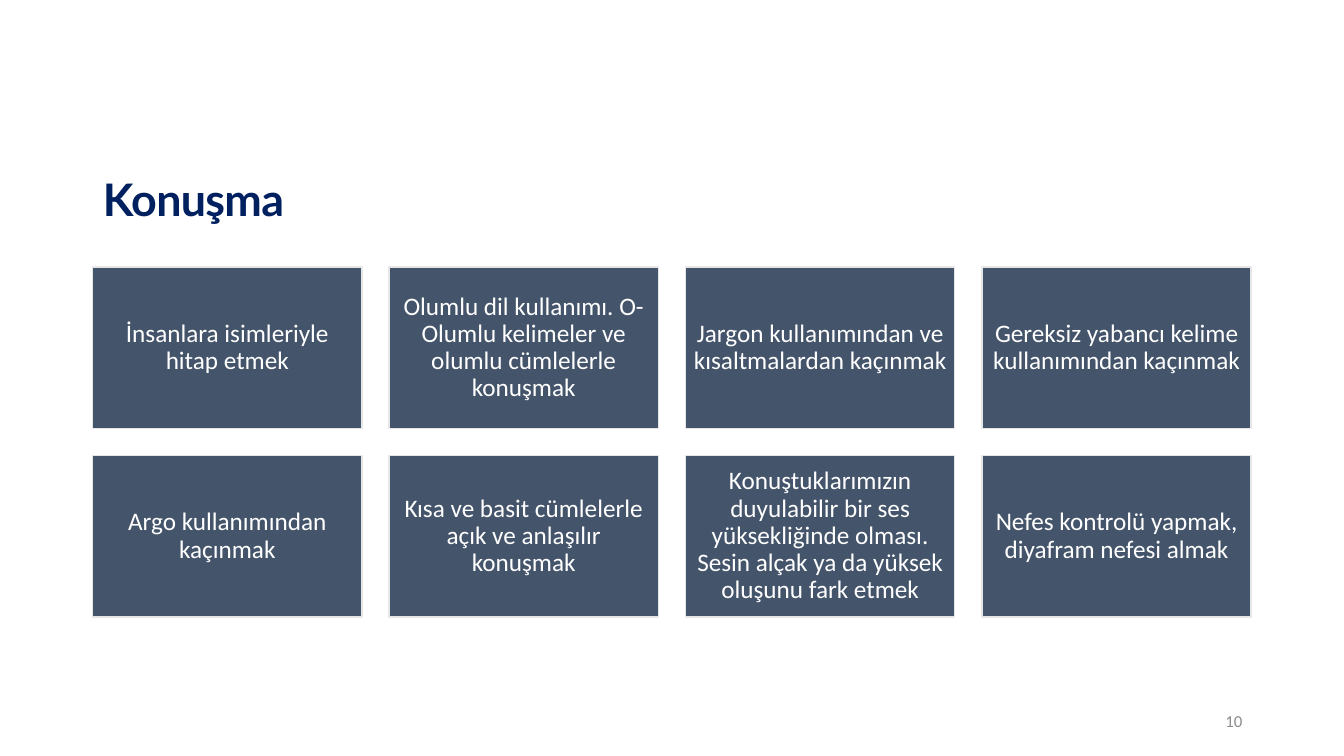
from pptx import Presentation
from pptx import util as u
from pptx.dml.color import RGBColor
from pptx.enum import shapes, text


def rgb(value):
    return RGBColor.from_string(value)


class SlideBuilder:
    NAVY, SLATE, PALE, WHITE, GREY = "002060", "44546A", "E7E6E6", "FFFFFF", "8C8C8C"
    HEADING, BODY = "Lato", "Calibri"

    def __init__(self, prs):
        self.slide = prs.slides.add_slide(prs.slide_layouts[5])

    def box(self, *lengths):
        return [u.Inches(n) for n in lengths]

    def label(self, sp, words, size, font, color, align, bold=False):
        tf = sp.text_frame
        tf.text = words
        tf.word_wrap = True
        tf.vertical_anchor = text.MSO_ANCHOR.MIDDLE
        p = tf.paragraphs[0]
        p.alignment = align
        r = p.runs[0]
        r.font.size = u.Pt(size)
        r.font.name = font
        r.font.bold = bold
        r.font.color.rgb = rgb(color)
        return p

    def title(self, words, *place):
        sp = self.slide.shapes.title
        sp.left, sp.top, sp.width, sp.height = self.box(*place)
        p = self.label(sp, words, 32, self.HEADING, self.NAVY, text.PP_ALIGN.LEFT, True)
        p.line_spacing = 0.9
        p.runs[0].font._element.set("spc", "-50")

    def card(self, words, *place):
        sp = self.slide.shapes.add_shape(shapes.MSO_SHAPE.RECTANGLE, *self.box(*place))
        sp.shadow.inherit = False
        sp.fill.solid()
        sp.fill.fore_color.rgb = rgb(self.SLATE)
        sp.line.color.rgb = rgb(self.PALE)
        sp.line.width = u.Pt(1)
        tf = sp.text_frame
        tf.margin_left = tf.margin_right = tf.margin_top = tf.margin_bottom = u.Inches(0.07)
        p = self.label(sp, words, 18, self.BODY, self.WHITE, text.PP_ALIGN.CENTER)
        p.line_spacing = 0.9

    def page_number(self, number, *place):
        sp = self.slide.shapes.add_textbox(*self.box(*place))
        self.label(sp, number, 12, self.BODY, self.GREY, text.PP_ALIGN.RIGHT)


CARDS = [
    "İnsanlara isimleriyle hitap etmek",
    "Olumlu dil kullanımı. O-Olumlu kelimeler ve olumlu cümlelerle konuşmak",
    "Jargon kullanımından ve kısaltmalardan kaçınmak",
    "Gereksiz yabancı kelime kullanımından kaçınmak",
    "Argo kullanımından kaçınmak",
    "Kısa ve basit cümlelerle açık ve anlaşılır konuşmak",
    "Konuştuklarımızın duyulabilir bir ses yüksekliğinde olması. "
    "Sesin alçak ya da yüksek oluşunu fark etmek",
    "Nefes kontrolü yapmak, diyafram nefesi almak",
]
COLUMNS = 4
LEFT, TOP = 0.92, 2.65
CARD_W, CARD_H, GAP = 2.67, 1.6, 0.27


def main():
    prs = Presentation()
    prs.slide_width, prs.slide_height = u.Inches(13.33), u.Inches(7.5)
    s = SlideBuilder(prs)
    s.title("Konuşma", LEFT, 1.28, 11.5, 1.45)
    for i, words in enumerate(CARDS):
        row, col = divmod(i, COLUMNS)
        s.card(words, LEFT + col * (CARD_W + GAP), TOP + row * (CARD_H + GAP), CARD_W, CARD_H)
    s.page_number("10", 9.42, 6.95, 3, 0.4)
    prs.save("out.pptx")


if __name__ == "__main__":
    main()
